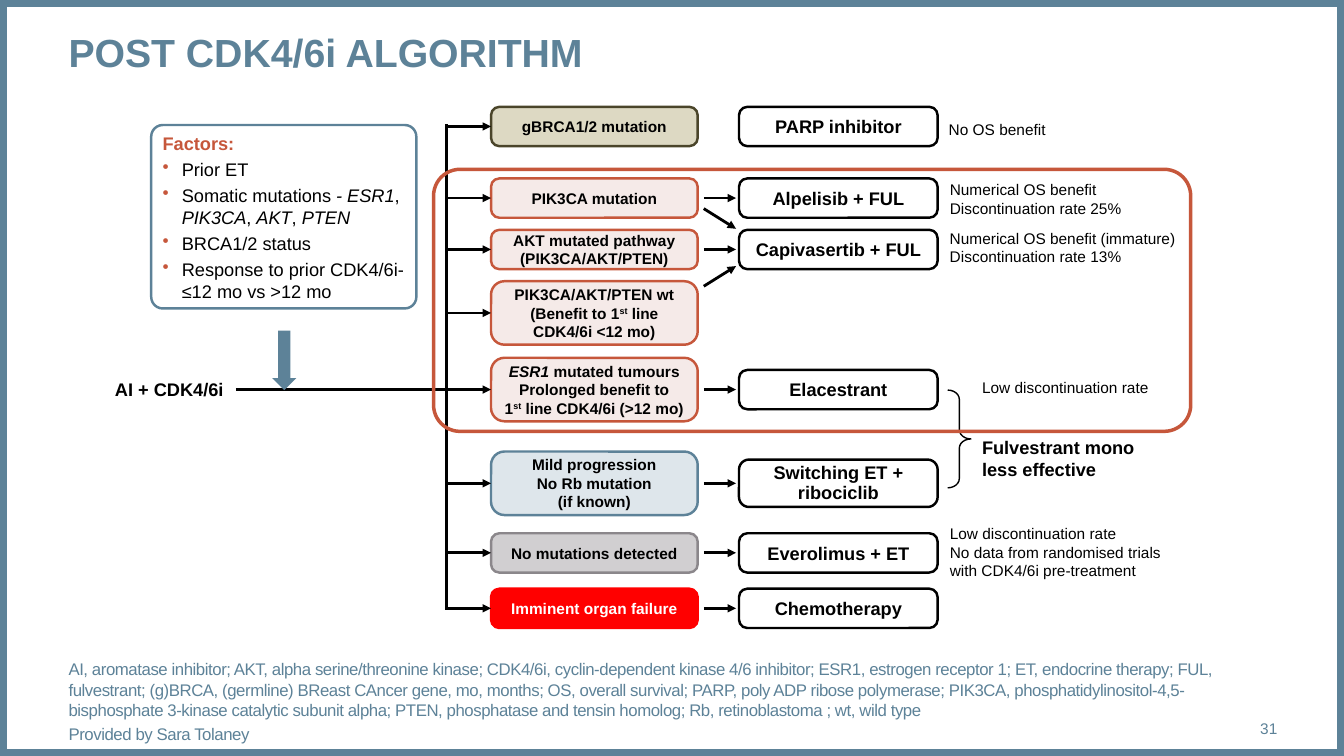
from lxml import etree
from pptx import Presentation
from pptx import util as u
from pptx.dml.color import RGBColor
from pptx.enum import shapes, text
from pptx.oxml.ns import qn

HUES = {
    "blue": "5D8298", "rust": "C6573B", "black": "000000", "white": "FFFFFF",
    "sand": "DDD9C3", "olive": "4A452A", "blush": "F5EAE8", "mist": "DEE6EB",
    "pale": "D1CFD1", "grey": "8B878B", "red": "FF0000",
}
TITLE = "POST CDK4/6i ALGORITHM"
# In all texts, ~ switches between plain and styled runs: "st" is raised, the rest italic
# Finding, top, height, fill, line, text colour, drug, drug height, arrow to drug
ROWS = [
    ("gBRCA1/2 mutation", 1.06, 0.39, "sand", "olive", "black",
     "PARP inhibitor", 0.39, False),
    ("PIK3CA mutation", 1.77, 0.39, "blush", "rust", "black",
     "Alpelisib + FUL", 0.39, True),
    ("AKT mutated pathway\n(PIK3CA/AKT/PTEN)", 2.28, 0.39, "blush", "rust", "black",
     "Capivasertib + FUL", 0.39, True),
    ("PIK3CA/AKT/PTEN wt (Benefit to 1~st~ line\nCDK4/6i <12 mo)", 2.79, 0.63,
     "blush", "rust", "black", None, 0, False),
    ("~ESR1~ mutated tumours Prolonged benefit to\n1~st~ line CDK4/6i (>12 mo)",
     3.55, 0.63, "blush", "rust", "black", "Elacestrant", 0.39, True),
    ("Mild progression\nNo Rb mutation\n(if known)", 4.48, 0.63,
     "mist", "blue", "black", "Switching ET + ribociclib", 0.47, True),
    ("No mutations detected", 5.29, 0.39, "pale", "grey", "black",
     "Everolimus + ET", 0.39, True),
    ("Imminent organ failure", 5.84, 0.39, "red", "red", "white",
     "Chemotherapy", 0.39, True),
]
START = 4  # row reached straight from the first-line therapy
FACTORS = [
    "Prior ET",
    "Somatic mutations ~- ESR1~, ~PIK3CA~, ~AKT~, ~PTEN~",
    "BRCA1/2 status",
    "Response to prior CDK4/6i- ≤12 mo vs >12 mo",
]
# Text, box, size, bold
NOTES = [
    (["AI + CDK4/6i"], (1.14, 3.75, 1.09, 0.22), 13, True),
    (["No OS benefit"], (9.41, 1.19, 1.57, 0.19), 11, False),
    (["Numerical OS benefit", "Discontinuation rate 25%"], (9.42, 1.79, 1.71, 0.37), 11, False),
    (["Numerical OS benefit (immature)", "Discontinuation rate 13%"],
     (9.42, 2.27, 2.34, 0.37), 11, False),
    (["Low discontinuation rate"], (9.74, 3.75, 1.66, 0.19), 11, False),
    (["Fulvestrant mono\nless effective"], (9.74, 4.33, 1.87, 0.44), 13, True),
    (["Low discontinuation rate", "No data from randomised trials\nwith CDK4/6i pre-treatment"],
     (9.42, 5.2, 2.11, 0.56), 11, False),
]
FOOT = [
    "AI, aromatase inhibitor; AKT, alpha serine/threonine kinase; CDK4/6i, cyclin-dependent "
    "kinase 4/6 inhibitor; ESR1, estrogen receptor 1; ET, endocrine therapy; FUL, fulvestrant; "
    "(g)BRCA, (germline) BReast CAncer gene, mo, months; OS, overall survival; PARP, poly ADP "
    "ribose polymerase; PIK3CA, phosphatidylinositol-4,5-bisphosphate 3-kinase catalytic subunit "
    "alpha; PTEN, phosphatase and tensin homolog; Rb, retinoblastoma ; wt, wild type",
    "Provided by Sara Tolaney",
]
TRUNK, CARD, CARD_W, DRUG, DRUG_W = 4.43, 4.87, 2.05, 7.33, 1.97
GAP = (6.98, 7.3)  # arrow span between the two columns
SLANTS = [(2.07, 2.27), (2.84, 2.64)]

KIND = shapes.MSO_SHAPE
LEFT, MID, RIGHT = text.PP_ALIGN.LEFT, text.PP_ALIGN.CENTER, text.PP_ALIGN.RIGHT

prs = Presentation()
prs.slide_width, prs.slide_height = u.Inches(13.33), u.Inches(7.5)
slide = prs.slides.add_slide(prs.slide_layouts[6])


def rgb(hue):
    return RGBColor.from_string(HUES[hue])


def write(para, words, size, hue="black", bold=False, align=LEFT, before=0, after=0):
    """Fill one paragraph, reading ~ as the switch for styled runs."""
    para.alignment = align
    para.space_before, para.space_after = u.Pt(before), u.Pt(after)
    font = para.font
    font.name, font.size, font.bold = "Arial", u.Pt(size), bold
    font.color.rgb = rgb(hue)
    for i, piece in enumerate(words.split("~")):
        for j, line in enumerate(piece.split("\n")):
            if j:
                para.add_line_break()
            if not line:
                continue
            run = para.add_run()
            run.text = line
            if i % 2 and line == "st":
                run._r.get_or_add_rPr().set("baseline", "30000")
            elif i % 2:
                run.font.italic = True


def setup(frame, inset=0.0, wrap=True, middle=False):
    frame.word_wrap = wrap
    frame.margin_left = frame.margin_right = u.Inches(inset)
    frame.margin_top = frame.margin_bottom = u.Inches(inset)
    frame.vertical_anchor = text.MSO_ANCHOR.MIDDLE if middle else text.MSO_ANCHOR.TOP


def label(lines, box, size, wrap=True, middle=False, **style):
    frame = slide.shapes.add_textbox(*map(u.Inches, box)).text_frame
    setup(frame, 0, wrap, middle)
    for i, line in enumerate(lines):
        para = frame.add_paragraph() if i else frame.paragraphs[0]
        write(para, line, size, **style)
    return frame


def draw(kind, box, fill=None, line=None, width=1.75, adj=()):
    item = slide.shapes.add_shape(kind, *map(u.Inches, box))
    item.shadow.inherit = False
    for i, value in enumerate(adj):
        item.adjustments[i] = value
    if fill:
        item.fill.solid()
        item.fill.fore_color.rgb = rgb(fill)
    else:
        item.fill.background()
    if line:
        item.line.color.rgb = rgb(line)
        item.line.width = u.Pt(width)
    else:
        item.line.fill.background()
    return item


def card(words, box, size, fill, line, hue="black"):
    item = draw(KIND.ROUNDED_RECTANGLE, box, fill, line, adj=[0.211])
    setup(item.text_frame, 0.08, middle=True)
    write(item.text_frame.paragraphs[0], words, size, hue, True, MID, after=2)
    return item


def link(x1, y1, x2, y2, head=True, goal=None):
    line = slide.shapes.add_connector(
        shapes.MSO_CONNECTOR.STRAIGHT, *map(u.Inches, (x1, y1, x2, y2)))
    if goal is not None:
        line.end_connect(goal, 1)
    line.line.color.rgb = rgb("black")
    line.line.width = u.Pt(2)
    if head:
        etree.SubElement(line.line._get_or_add_ln(), qn("a:tailEnd"), type="triangle")
    etree.SubElement(line._element.spPr, qn("a:effectLst"))


def bullet(para):
    props = para._p.get_or_add_pPr()
    props.set("marL", str(u.Inches(0.19)))
    props.set("indent", str(-u.Inches(0.19)))
    tint = etree.SubElement(props, qn("a:buClr"))
    etree.SubElement(tint, qn("a:srgbClr"), val=HUES["rust"])
    etree.SubElement(props, qn("a:buChar"), char="•")


draw(KIND.RECTANGLE, (0, 0, 13.33, 7.5), line="blue", width=10)
label([TITLE], (0.68, 0.28, 11.99, 0.94), 28, hue="blue", bold=True)
foot = label(FOOT, (0.68, 6.76, 11.99, 0.4), 12, middle=True, hue="blue", before=3)
for para in foot.paragraphs:
    for run in para.runs:
        run._r.get_or_add_rPr().set("spc", "-30")
label(["31"], (11.81, 7.03, 0.86, 0.4), 11, middle=True, hue="blue", align=RIGHT)

panel = draw(KIND.ROUNDED_RECTANGLE, (1.5, 1.24, 2.63, 1.82), "white", "blue", adj=[0.063])
setup(panel.text_frame, 0.08, middle=True)
write(panel.text_frame.paragraphs[0], "Factors:", 13, "rust", True, after=3)
for factor in FACTORS:
    para = panel.text_frame.add_paragraph()
    bullet(para)
    write(para, factor, 13, after=3)

for lines, box, size, bold in NOTES:
    label(lines, box, size, wrap=False, bold=bold)

link(TRUNK, 6.05, TRUNK, 1.23, head=False)
for i, (name, top, high, fill, line, hue, drug, tall, arrow) in enumerate(ROWS):
    mid = top + high / 2
    goal = card(name, (CARD, top, CARD_W, high), 11, fill, line, hue)
    link(2.34 if i == START else TRUNK, mid, CARD, mid, goal=goal)
    if drug:
        item = card(drug, (DRUG, mid - tall / 2, DRUG_W, tall), 13, "white", "black")
        if tall > 0.39:
            item.text_frame.paragraphs[0].line_spacing = 0.9
    if arrow:
        link(GAP[0], mid, GAP[1], mid)
for y1, y2 in SLANTS:
    link(GAP[0], y1, GAP[1], y2)

draw(KIND.RIGHT_BRACE, (9.4, 3.87, 0.23, 0.97), line="black", width=1, adj=[0.4, 0.5])
draw(KIND.DOWN_ARROW, (2.7, 3.28, 0.24, 0.59), fill="blue")
draw(KIND.ROUNDED_RECTANGLE, (4.3, 1.68, 7.51, 2.6), line="rust", width=2.5, adj=[0.101])

prs.save("out.pptx")
